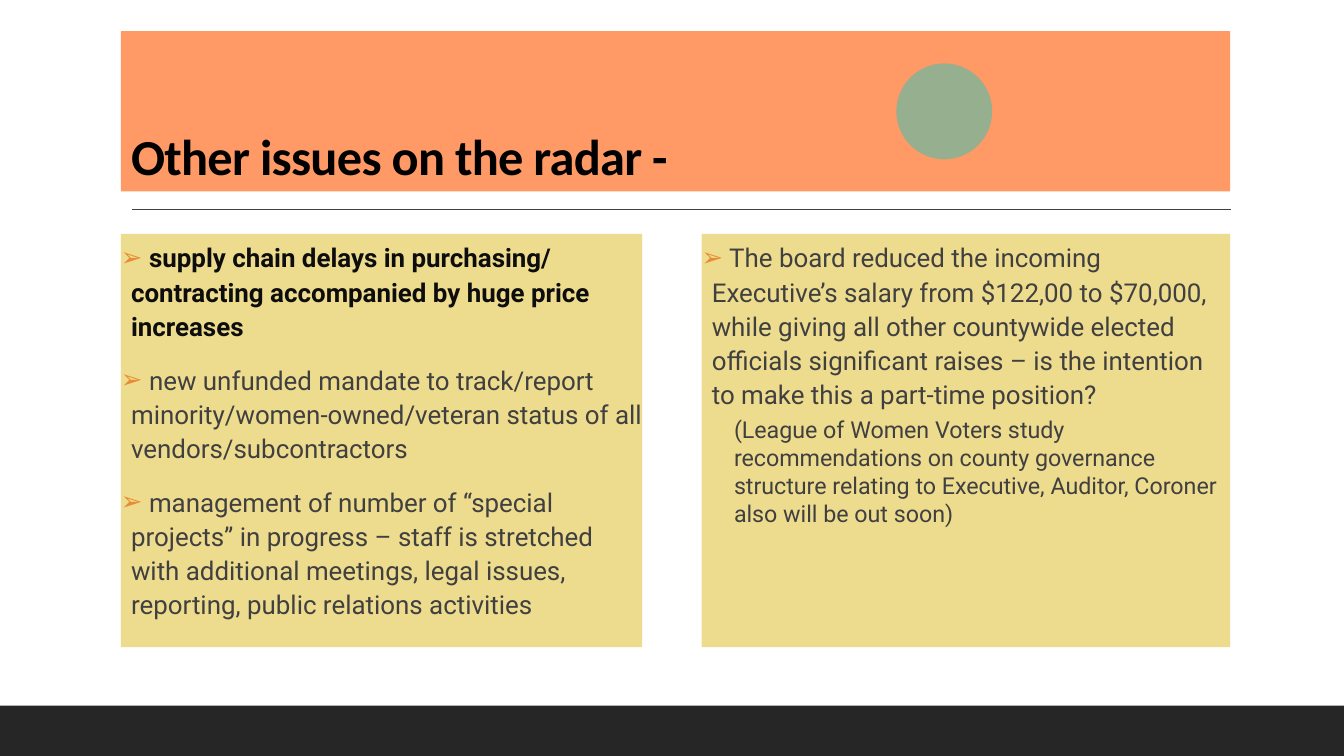
"""Build the slide on other issues on the radar."""
from lxml import etree
from pptx import Presentation
from pptx.dml.color import RGBColor
from pptx.enum.shapes import MSO_CONNECTOR, MSO_SHAPE
from pptx.enum.text import MSO_ANCHOR, MSO_AUTO_SIZE, PP_ALIGN
from pptx.oxml.ns import qn
from pptx.util import Inches, Pt


def rgb(color):
    return RGBColor.from_string(color)


def place(shape, left, top, width, height, color):
    shape.left, shape.top = Inches(left), Inches(top)
    shape.width, shape.height = Inches(width), Inches(height)
    shape.fill.solid()
    shape.fill.fore_color.rgb = rgb(color)


W, H = 13.33, 7.5
LEFT, RIGHT = 1.2, 12.2
BODY_TOP, BODY_HEIGHT = 2.32, 4.1
INK, GREY = "0D0D0D", "404040"

prs = Presentation()
prs.slide_width, prs.slide_height = Inches(W), Inches(H)
s = prs.slides.add_slide(prs.slide_layouts[3])
title, left_body, right_body = list(s.placeholders)[:3]
for ph in list(s.placeholders)[3:]:
    ph.element.getparent().remove(ph.element)

footer = s.shapes.add_shape(MSO_SHAPE.RECTANGLE, 0, 0, 0, 0)
place(footer, 0, 7, W, H - 7, "262626")
footer.line.fill.background()
footer.shadow.inherit = False

rule = s.shapes.add_connector(MSO_CONNECTOR.STRAIGHT, Inches(1.31), Inches(2.08),
                              Inches(12.21), Inches(2.08))
rule.line.color.rgb = rgb(GREY)
rule.line.width = Pt(1)
etree.SubElement(rule.element.spPr, qn("a:effectLst"))

place(title, LEFT, 0.31, RIGHT - LEFT, 1.59, "FF9966")
tf = title.text_frame
tf.auto_size = MSO_AUTO_SIZE.NONE
tf.vertical_anchor = MSO_ANCHOR.BOTTOM
p = tf.paragraphs[0]
p.alignment = PP_ALIGN.LEFT
p.line_spacing = 0.9
r = p.add_run()
r.text = "Other issues on the radar -"
r.font.name, r.font.size, r.font.bold = "Calibri", Pt(36), True
r.font.color.rgb = rgb("000000")
r.font._element.set("spc", "-50")

columns = [
    (left_body, LEFT, 5.17, [
        (0, INK, " supply chain delays in purchasing/ contracting accompanied "
                 "by huge price increases"),
        (0, GREY, " new unfunded mandate to track/report "
                  "minority/women-owned/veteran status of all vendors/subcontractors"),
        (0, GREY, " management of number of “special projects” in progress – staff "
                  "is stretched with additional meetings, legal issues, reporting, "
                  "public relations activities"),
    ]),
    (right_body, 6.96, RIGHT - 6.96, [
        (0, GREY, " The board reduced the incoming Executive’s salary from $122,00 "
                  "to $70,000, while giving all other countywide elected officials "
                  "significant raises – is the intention to make this a part-time "
                  "position?"),
        (1, GREY, "(League of Women Voters study recommendations on county "
                  "governance structure relating to Executive, Auditor, Coroner "
                  "also will be out soon)"),
    ]),
]
levels = [
    dict(size=18.5, spacing=1.1, before=12, after=2, margin=0.1, indent=-0.1),
    dict(size=16.6, spacing=1.0, before=2, after=4, margin=0.32, indent=0),
]
for body, left, width, items in columns:
    place(body, left, BODY_TOP, width, BODY_HEIGHT, "EEDC8E")
    tf = body.text_frame
    tf.auto_size = MSO_AUTO_SIZE.NONE
    tf.margin_left = tf.margin_right = 0
    for i, (level, color, text) in enumerate(items):
        look = levels[level]
        p = tf.add_paragraph() if i else tf.paragraphs[0]
        p.level = level
        p.line_spacing = look["spacing"]
        p.space_before, p.space_after = Pt(look["before"]), Pt(look["after"])
        pPr = p._p.get_or_add_pPr()
        pPr.set("marL", str(Inches(look["margin"])))
        pPr.set("indent", str(Inches(look["indent"])))
        if level:
            etree.SubElement(pPr, qn("a:buNone"))
        else:
            bullet_color = etree.SubElement(pPr, qn("a:buClr"))
            etree.SubElement(bullet_color, qn("a:srgbClr"), val="E88B33")
            etree.SubElement(pPr, qn("a:buChar"), char="➢")
        r = p.add_run()
        r.text = text
        r.font.name, r.font.size = "Roboto", Pt(look["size"])
        r.font.bold = color == INK
        r.font.color.rgb = rgb(color)

dot = s.shapes.add_shape(MSO_SHAPE.OVAL, 0, 0, 0, 0)
place(dot, 8.89, 0.63, 0.95, 0.95, "96AF8F")
dot.line.fill.background()
dot.shadow.inherit = False

prs.save("out.pptx")
